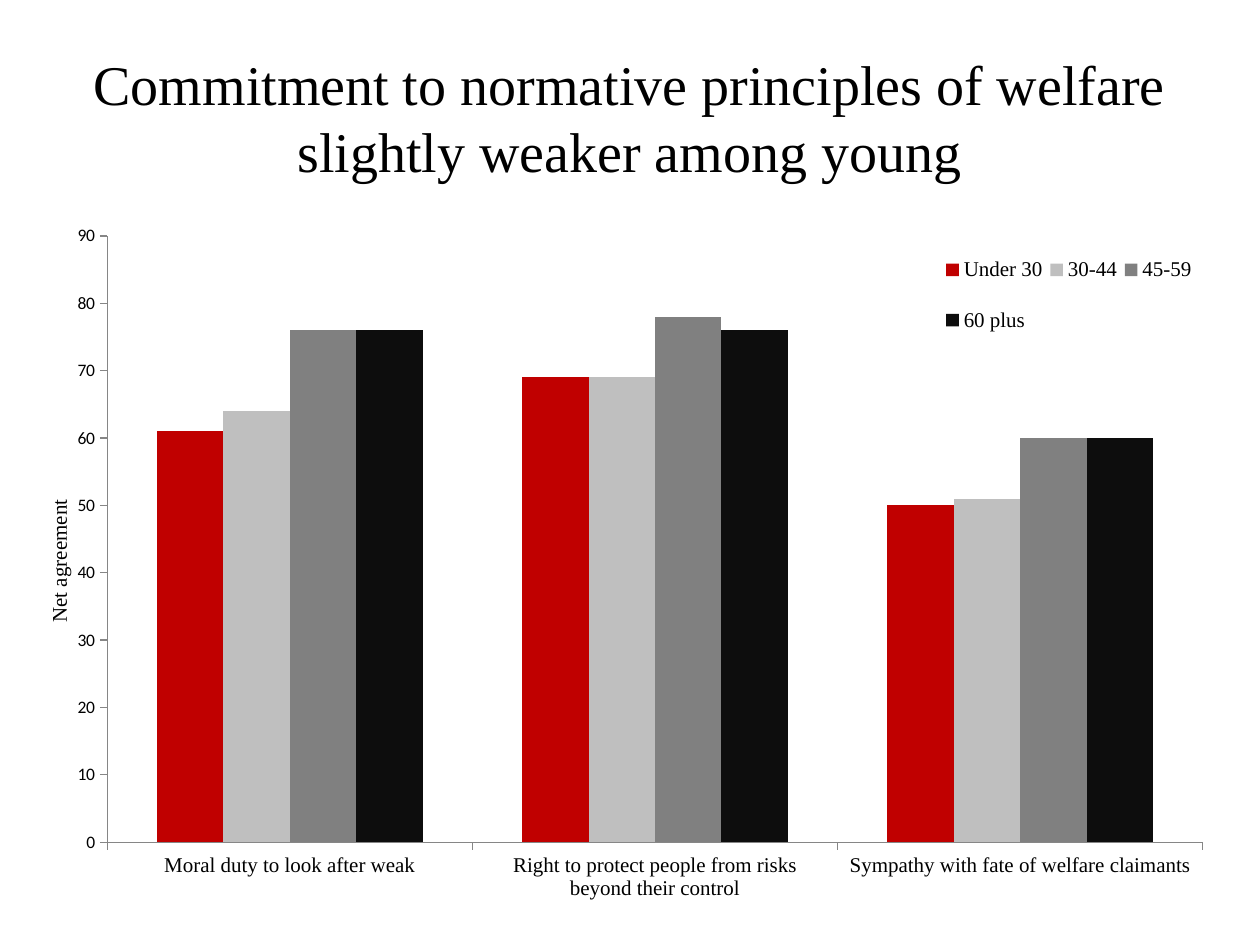
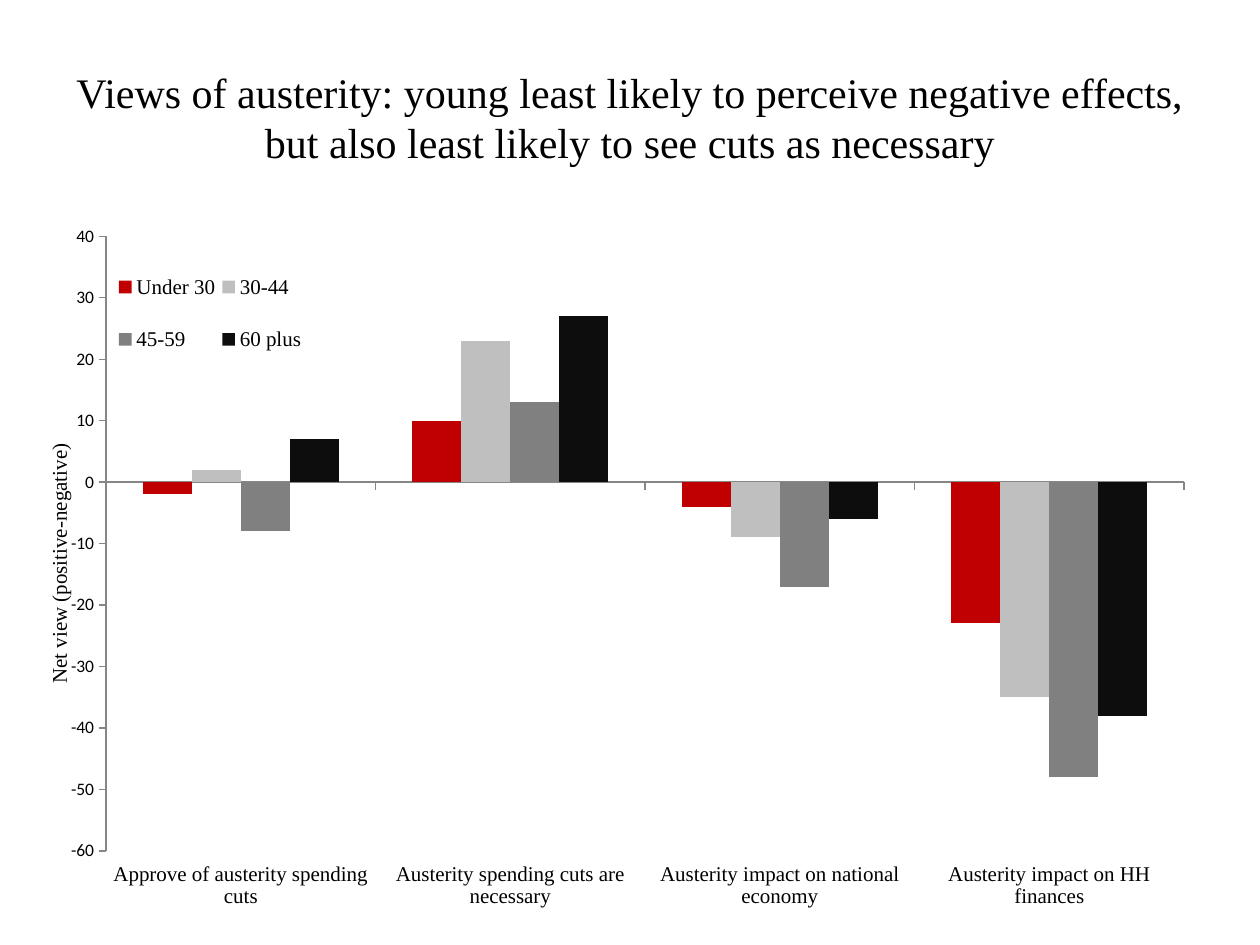
from pptx import Presentation
from pptx.chart.data import CategoryChartData
from pptx.dml.color import RGBColor
from pptx.enum.chart import XL_CHART_TYPE, XL_LEGEND_POSITION, XL_TICK_LABEL_POSITION, XL_TICK_MARK
from pptx.enum.text import MSO_ANCHOR, PP_ALIGN
from pptx.oxml import parse_xml
from pptx.oxml.ns import nsdecls, qn
from pptx.util import Inches, Pt

COLUMNS = XL_CHART_TYPE.COLUMN_CLUSTERED
RIGHT = XL_LEGEND_POSITION.RIGHT
LOW = XL_TICK_LABEL_POSITION.LOW
OUTSIDE, NO_TICK = XL_TICK_MARK.OUTSIDE, XL_TICK_MARK.NONE
MIDDLE, CENTER = MSO_ANCHOR.MIDDLE, PP_ALIGN.CENTER

BLACK, AXIS_GREY = "000000", "868686"
SERIF, SANS = "Times New Roman", "Calibri"
AGE_COLORS = {"Under 30": "C00000", "30-44": "BFBFBF", "45-59": "808080", "60 plus": "0D0D0D"}
PLOT_BOX = {"x": 0.061, "y": 0.023, "w": 0.928, "h": 0.895}


def rgb(hex_color):
    return RGBColor.from_string(hex_color)


def set_layout(element, index, box, inner=False):
    """Place a chart part by hand; box holds fractions of the chart size."""
    for old in element.findall(qn("c:layout")):
        element.remove(old)
    target = '<c:layoutTarget val="inner"/>' if inner else ""
    modes = "".join(f'<c:{k}Mode val="edge"/>' for k in "xy")
    sizes = "".join(f'<c:{k} val="{v}"/>' for k, v in box.items())
    element.insert(index, parse_xml(
        f'<c:layout {nsdecls("c")}><c:manualLayout>{target}{modes}{sizes}'
        "</c:manualLayout></c:layout>"))


class Deck:
    """Holds the presentation, its style and the current slide."""

    def __init__(self):
        self.prs = Presentation()
        self.prs.slide_width, self.prs.slide_height = Inches(10), Inches(7.5)

    def add_slide(self):
        self.s = self.prs.slides.add_slide(self.prs.slide_layouts[6])

    def style_font(self, font, size, name=SERIF):
        formats = {"size": Pt(size), "name": name, "bold": False}
        for key, value in formats.items():
            setattr(font, key, value)
        font.color.rgb = rgb(BLACK)

    def title(self, text, size):
        sp = self.s.shapes.add_textbox(Inches(0.5), Inches(0.3), Inches(9), Inches(1.25))
        tf = sp.text_frame
        tf.word_wrap, tf.vertical_anchor = True, MIDDLE
        p = tf.paragraphs[0]
        p.alignment = CENTER
        r = p.add_run()
        r.text = text
        self.style_font(r.font, size)

    def axis(self, axis, size, name):
        formats = {"has_major_gridlines": False, "major_tick_mark": OUTSIDE,
                   "minor_tick_mark": NO_TICK}
        for key, value in formats.items():
            setattr(axis, key, value)
        axis.format.line.color.rgb = rgb(AXIS_GREY)
        axis.format.line.width = Pt(0.75)
        self.style_font(axis.tick_labels.font, size, name)

    def axis_title(self, axis, text, top):
        title = axis.axis_title
        p = title.text_frame.paragraphs[0]
        r = p.add_run()
        r.text = text
        self.style_font(r.font, 12)
        body = title.text_frame._txBody.bodyPr
        body.set("rot", "-5400000")
        body.set("vert", "horz")
        set_layout(title._element, 1, {"x": 0.006, "y": top})

    def legend(self, chart, box):
        chart.has_legend = True
        legend = chart.legend
        legend.position, legend.include_in_layout = RIGHT, False
        self.style_font(legend.font, 12)
        set_layout(legend._element, 1, box)

    def age_chart(self, size, categories, values, scale, value_title, title_top, legend_box):
        """Draw columns by age group; scale is the value axis minimum and maximum."""
        data = CategoryChartData()
        data.categories = categories
        for age, row in zip(AGE_COLORS, values):
            data.add_series(age, row)
        width, height = size
        chart = self.s.shapes.add_chart(COLUMNS, Inches(0.28), Inches(1.75),
                                        Inches(width), Inches(height), data).chart
        chart.has_title = False
        self.style_font(chart.font, 10, SANS)

        plot = chart.plots[0]
        plot.gap_width, plot.overlap, plot.vary_by_categories = 150, 0, False
        for series, color in zip(plot.series, AGE_COLORS.values()):
            series.invert_if_negative = False
            series.format.fill.solid()
            series.format.fill.fore_color.rgb = rgb(color)
        set_layout(chart._chartSpace.chart.plotArea, 0, PLOT_BOX, inner=True)

        self.axis(chart.category_axis, 12, SERIF)
        chart.category_axis.tick_labels.offset = 100
        chart.category_axis.tick_label_position = LOW
        value_axis = chart.value_axis
        self.axis(value_axis, 10, SANS)
        value_axis.minimum_scale, value_axis.maximum_scale = scale
        value_axis.major_unit = 10
        self.axis_title(value_axis, value_title, title_top)
        self.legend(chart, legend_box)


def main():
    deck = Deck()

    deck.add_slide()
    deck.title("Commitment to normative principles of welfare slightly weaker among young", 32)
    deck.age_chart(
        (9.37, 5.39),
        ["Moral duty to look after weak",
         "Right to protect people from risks beyond their control",
         "Sympathy with fate of welfare claimants"],
        [(61, 69, 50), (64, 69, 51), (76, 78, 60), (76, 76, 60)],
        (0, 90), "Net agreement", 0.407,
        {"x": 0.765, "y": 0.015, "w": 0.221, "h": 0.19})

    deck.add_slide()
    deck.title("Views of austerity: young least likely to perceive negative effects, "
               "but also least likely to see cuts as necessary", 24)
    deck.age_chart(
        (9.22, 5.46),
        ["Approve of austerity spending cuts",
         "Austerity spending cuts are necessary",
         "Austerity impact on national economy",
         "Austerity impact on HH finances"],
        [(-2, 10, -4, -23), (2, 23, -9, -35), (-8, 13, -17, -48), (7, 27, -6, -38)],
        (-60, 40), "Net view (positive-negative)", 0.32,
        {"x": 0.066, "y": 0.037, "w": 0.169, "h": 0.196})

    deck.prs.save("out.pptx")


if __name__ == "__main__":
    main()
